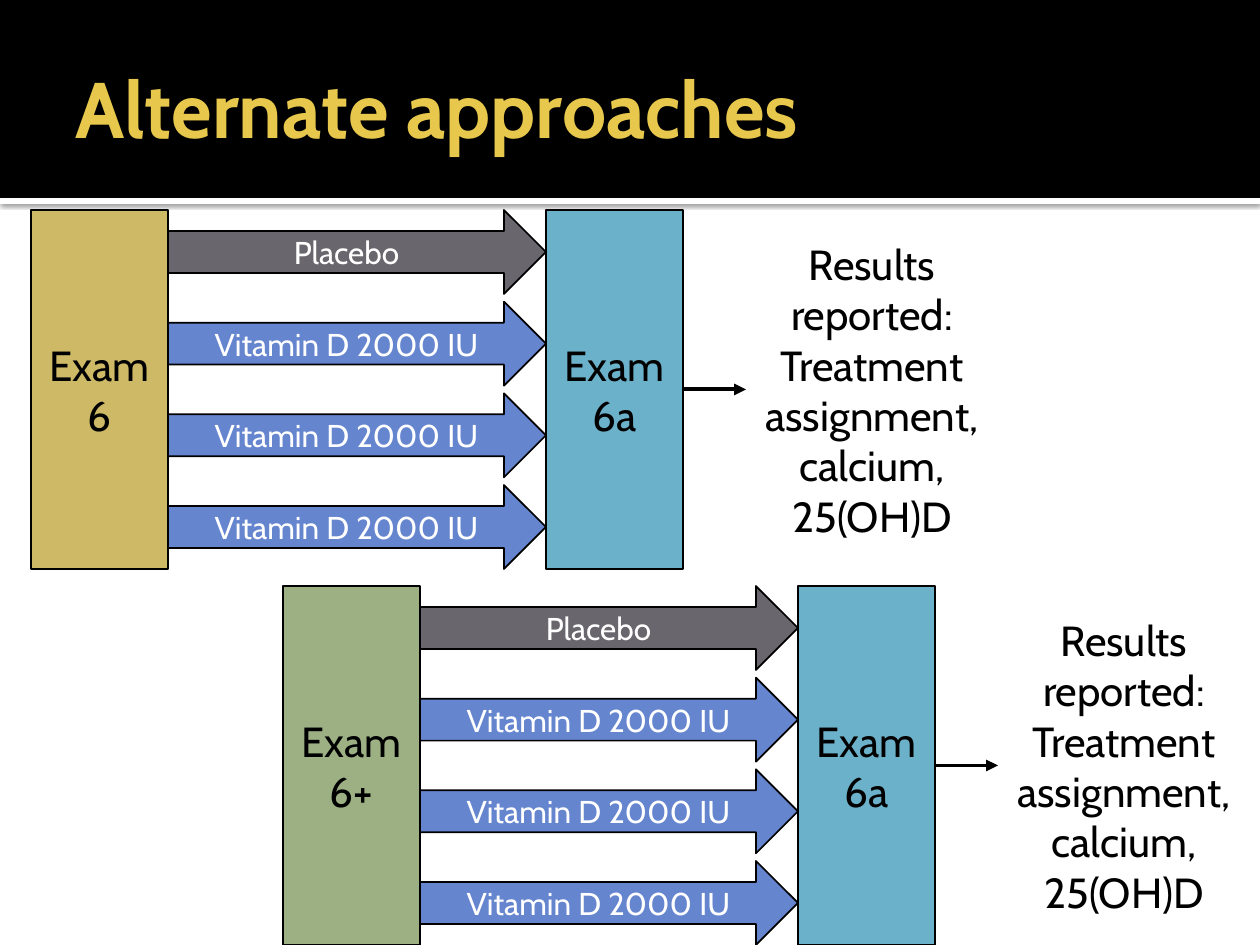
from lxml import etree
from pptx import Presentation
from pptx.dml.color import RGBColor
from pptx.enum.shapes import MSO_CONNECTOR, MSO_SHAPE
from pptx.enum.text import MSO_ANCHOR, PP_ALIGN
from pptx.oxml import parse_xml
from pptx.oxml.ns import qn
from pptx.util import Pt

RECT, ARROW = MSO_SHAPE.RECTANGLE, MSO_SHAPE.RIGHT_ARROW
STRAIGHT = MSO_CONNECTOR.STRAIGHT
MIDDLE, CENTER, LEFT = MSO_ANCHOR.MIDDLE, PP_ALIGN.CENTER, PP_ALIGN.LEFT

BLACK = RGBColor(0x00, 0x00, 0x00)
WHITE = RGBColor(0xFF, 0xFF, 0xFF)
YELLOW = RGBColor(0xE8, 0xC8, 0x4C)
GOLD = RGBColor(0xCE, 0xB9, 0x66)
GREEN = RGBColor(0x9C, 0xB0, 0x84)
TEAL = RGBColor(0x6B, 0xB1, 0xC9)
GRAY = RGBColor(0x69, 0x67, 0x6D)
BLUE = RGBColor(0x65, 0x85, 0xCF)

FONT = "Cabin"
PX = 914400 // 126
TITLE = "Alternate approaches"
ARMS = [("Placebo", GRAY)] + [("Vitamin D 2000 IU", BLUE)] * 3
RESULTS = ["Results reported:", "Treatment assignment, calcium, 25(OH)D"]
TRIALS = [
    ("Exam 6", GOLD, 31, 210),
    ("Exam 6+", GREEN, 283, 586),
]
BOX_W, ROW_H = 137, 359
ARM_W, ARM_H = 378, 84
GAP, NOTE_W = 63, 252
STEP = (ROW_H - ARM_H) / (len(ARMS) - 1)
SHADOW = (
    '<a:effectLst xmlns:a="http://schemas.openxmlformats.org/drawingml/2006/main">'
    '<a:outerShdw blurRad="31750" dist="10160" dir="5400000" rotWithShape="0">'
    '<a:srgbClr val="000000"><a:alpha val="60000"/></a:srgbClr>'
    '</a:outerShdw></a:effectLst>'
)


def emu(*nums):
    return [round(n * PX) for n in nums]


def write(shape, lines, size, color, align=CENTER, bold=False):
    frame = shape.text_frame
    frame.word_wrap = True
    frame.vertical_anchor = MIDDLE
    frame.text = "\n".join(lines)
    for para in frame.paragraphs:
        para.alignment = align
        font = para.font
        font.name, font.size, font.bold = FONT, Pt(size), bold
        font.color.rgb = color


def block(kind, area, fill, line=None):
    shape = shapes.add_shape(kind, *emu(*area))
    shape.shadow.inherit = False
    shape.fill.solid()
    shape.fill.fore_color.rgb = fill
    if line is None:
        shape.line.fill.background()
    else:
        shape.line.color.rgb = line
        shape.line.width = Pt(1)
    return shape


def link(start, end):
    line = shapes.add_connector(STRAIGHT, 0, 0, 0, 0)
    line.begin_connect(start, 3)
    line.end_connect(end, 1)
    line.line.color.rgb = BLACK
    line.line.width = Pt(2.25)
    etree.SubElement(line.line._get_or_add_ln(), qn("a:tailEnd"), type="triangle")
    etree.SubElement(line._element.spPr, qn("a:effectLst"))


def trial(name, color, left, top):
    first = block(RECT, (left, top, BOX_W, ROW_H), color, BLACK)
    write(first, [name], 24, BLACK)
    arm_x = left + BOX_W
    last_x = arm_x + ARM_W
    last = block(RECT, (last_x, top, BOX_W, ROW_H), TEAL, BLACK)
    write(last, ["Exam 6a"], 24, BLACK)
    for i, (text, fill) in enumerate(ARMS):
        arm = block(ARROW, (arm_x, top + i * STEP, ARM_W, ARM_H), fill, BLACK)
        write(arm, [text], 18, WHITE)
    note_x = last_x + BOX_W + GAP
    note = shapes.add_textbox(*emu(note_x, top, NOTE_W, ROW_H))
    write(note, RESULTS, 24, BLACK)
    link(last, note)


prs = Presentation()
prs.slide_width, prs.slide_height = emu(1260, 945)
slide = prs.slides.add_slide(prs.slide_layouts[5])
shapes = slide.shapes

strip = block(RECT, (0, 198, 1260, 6), WHITE)
props = strip._element.spPr
props.replace(props.find(qn("a:effectLst")), parse_xml(SHADOW))
block(RECT, (0, 0, 1260, 198), BLACK)

title = shapes.title
title.left, title.top, title.width, title.height = emu(63, 21, 1134, 173)
write(title, [TITLE], 45, YELLOW, LEFT, True)
frame = title.text_frame
frame.margin_left = Pt(7.2)
frame.margin_top = frame.margin_right = frame.margin_bottom = Pt(3.6)
title._element.getparent().append(title._element)

for row in TRIALS:
    trial(*row)

prs.save("out.pptx")
